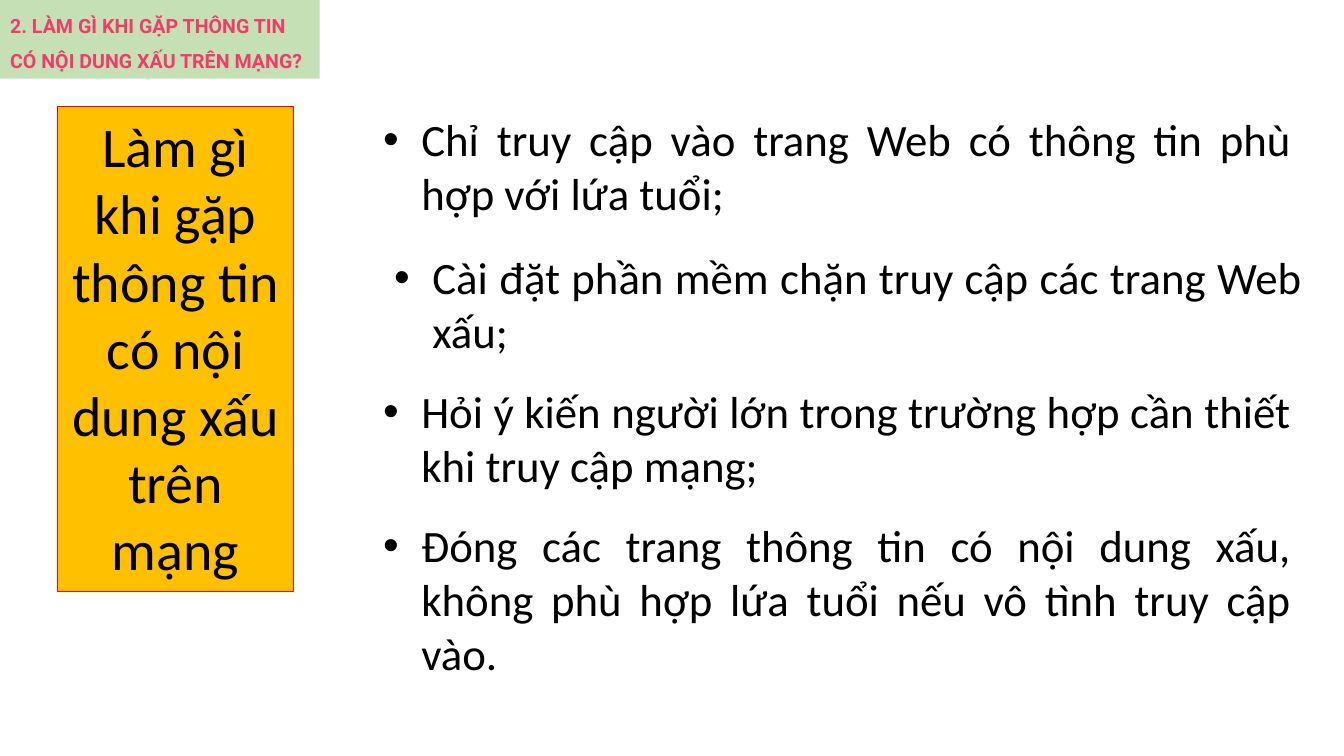
"""Build the slide on handling harmful online content."""
import pptx
import pptx.dml.color
import pptx.enum.shapes
import pptx.enum.text
import pptx.oxml
import pptx.oxml.ns
import pptx.util

COLORS = {"amber": "FFC000", "red": "FF0000", "green": "C5E0B4", "pink": "F03C69", "black": "000000"}
ALIGN = pptx.enum.text.PP_ALIGN
RGB = pptx.dml.color.RGBColor.from_string

presentation = pptx.Presentation()
presentation.slide_width = pptx.util.Inches(13.33)
presentation.slide_height = pptx.util.Inches(7.5)
slide = presentation.slides.add_slide(presentation.slide_layouts[5])


def share_box(left, top, width, height):
    """Turn percentages of the slide into lengths."""
    across = presentation.slide_width / 100
    down = presentation.slide_height / 100
    return [int(length) for length in (left * across, top * down, width * across, height * down)]


def write_text(shape, text, size, font="Calibri", color="black", bold=False,
               align=ALIGN.LEFT, spacing=1.0, bullet=None):
    """Write one formatted paragraph into a shape."""
    frame = shape.text_frame
    frame.word_wrap = True
    frame.auto_size = pptx.enum.text.MSO_AUTO_SIZE.NONE
    frame.vertical_anchor = pptx.enum.text.MSO_ANCHOR.TOP
    paragraph = frame.paragraphs[0]
    paragraph.alignment = align
    paragraph.line_spacing = spacing
    run = paragraph.add_run()
    run.text = text
    run.font.size = pptx.util.Pt(size)
    run.font.name = font
    run.font.bold = bold
    run.font.color.rgb = RGB(COLORS[color])
    if bullet:
        properties = paragraph._p.get_or_add_pPr()
        indent = pptx.util.Inches(0.38)
        properties.set("marL", str(indent))
        properties.set("indent", str(-indent))
        namespace = pptx.oxml.ns.nsdecls("a")
        properties.append(pptx.oxml.parse_xml(f'<a:buFont {namespace} typeface="Arial"/>'))
        properties.append(pptx.oxml.parse_xml(f'<a:buChar {namespace} char="{bullet}"/>'))


title = slide.shapes.title
title.left, title.top, title.width, title.height = share_box(0, -0.4, 23.78, 10.8)
title.fill.solid()
title.fill.fore_color.rgb = RGB(COLORS["green"])
write_text(title, "2. LÀM GÌ KHI GẶP THÔNG TIN CÓ NỘI DUNG XẤU TRÊN MẠNG?", 14,
           font="Roboto", color="pink", bold=True, spacing=1.5)

question = slide.shapes.add_shape(pptx.enum.shapes.MSO_SHAPE.RECTANGLE,
                                  *share_box(4.28, 14.13, 17.55, 64.13))
question.shadow.inherit = False
question.fill.solid()
question.fill.fore_color.rgb = RGB(COLORS["amber"])
question.line.color.rgb = RGB(COLORS["red"])
question.line.width = pptx.util.Pt(0.75)
write_text(question, "Làm gì khi gặp thông tin có nội dung xấu trên mạng", 40, align=ALIGN.CENTER)

answers = [
    (27.76, 14.13, 15.73, "Chỉ truy cập vào trang Web có thông tin phù hợp với lứa tuổi;"),
    (28.58, 32.4, 15.73, "Cài đặt phần mềm chặn truy cập các trang Web xấu;"),
    (27.76, 50.13, 15.73, "Hỏi ý kiến người lớn trong trường hợp cần thiết khi truy cập mạng;"),
    (27.76, 67.87, 22.93, "Đóng các trang thông tin có nội dung xấu, không phù hợp lứa tuổi "
                          "nếu vô tình truy cập vào."),
]
for left, top, height, text in answers:
    answer = slide.shapes.add_textbox(*share_box(left, top, 69.09, height))
    write_text(answer, text, 32, align=ALIGN.JUSTIFY, bullet="•")

presentation.save("out.pptx")
